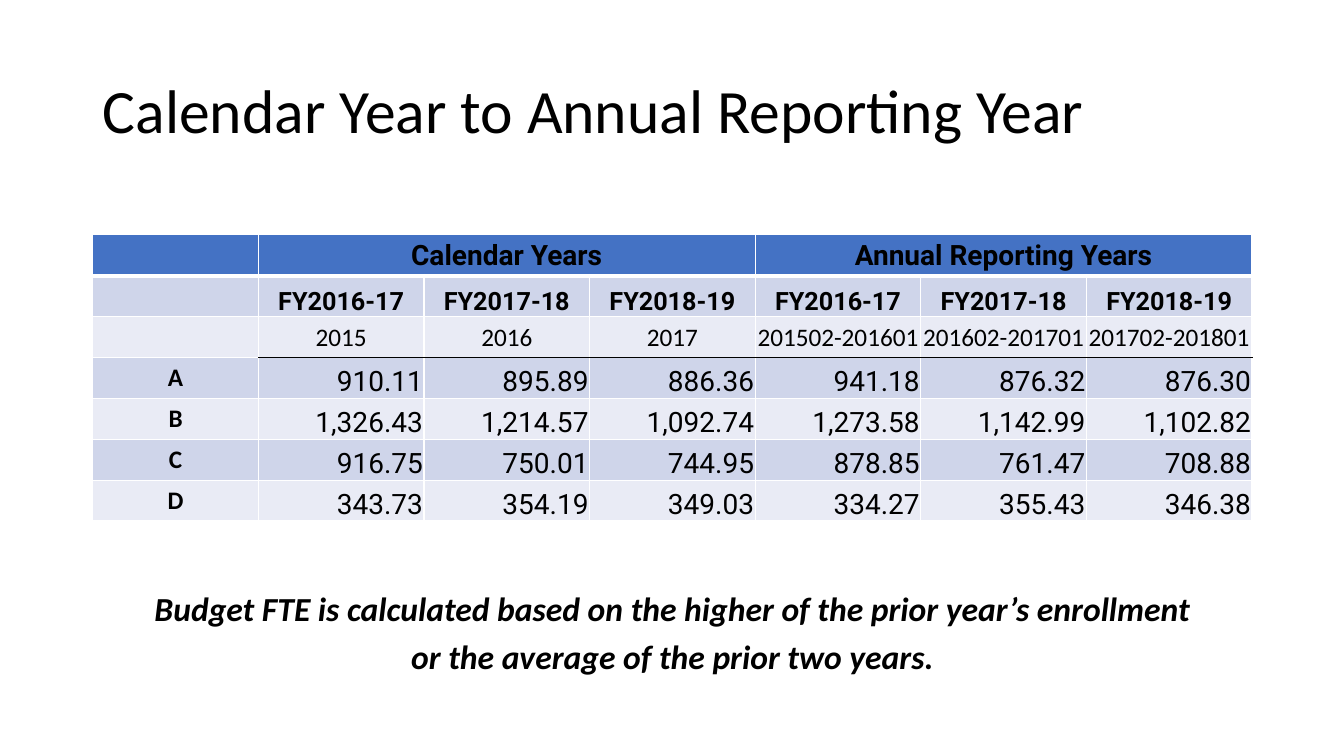
import pptx
import pptx.dml.color
import pptx.enum.text
import pptx.util
from lxml import etree
from pptx.oxml.ns import qn

TITLE = "Calendar Year to Annual Reporting Year"
YEARS = ["FY2016-17", "FY2017-18", "FY2018-19"]
ROWS = [
    ["", "Calendar Years", "", "", "Annual Reporting Years", "", ""],
    ["", *YEARS, *YEARS],
    ["", "2015", "2016", "2017", "201502-201601", "201602-201701", "201702-201801"],
    ["A", "910.11", "895.89", "886.36", "941.18", "876.32", "876.30"],
    ["B", "1,326.43", "1,214.57", "1,092.74", "1,273.58", "1,142.99", "1,102.82"],
    ["C", "916.75", "750.01", "744.95", "878.85", "761.47", "708.88"],
    ["D", "343.73", "354.19", "349.03", "334.27", "355.43", "346.38"],
]
BUDGET_RULE = [
    "Budget FTE is calculated based on the higher of the prior year’s enrollment",
    "or the average of the prior two years.",
]
COLORS = {"text": "000000", "grid": "FFFFFF", "rule": "000000",
          "header": "4472C4", "odd": "CFD5EA", "even": "E9EBF5"}

ALIGN = pptx.enum.text.PP_ALIGN
ANCHOR = pptx.enum.text.MSO_ANCHOR
# Row styles: font, size, bold, alignment, anchor
GROUP = ("Roboto", 20, True, ALIGN.CENTER, ANCHOR.MIDDLE)
FISCAL = ("Roboto", 18, True, ALIGN.CENTER, ANCHOR.BOTTOM)
PERIOD = ("Calibri", 18, False, ALIGN.CENTER, ANCHOR.MIDDLE)
VALUE = ("Roboto", 20, False, ALIGN.RIGHT, ANCHOR.BOTTOM)
LABEL = ("Calibri", 18, True, ALIGN.CENTER, ANCHOR.TOP)
ROW_STYLES = [GROUP, FISCAL, PERIOD] + [VALUE] * 4

inch = pptx.util.Inches
LEFT, WIDTH = inch(0.92), inch(11.5)
ROW_HEIGHT = inch(2.84 / len(ROWS))
PERIOD_ROW = 2


def style_paragraph(paragraph, font, size, bold, align, italic=False):
    paragraph.alignment = align
    for run in paragraph.runs:
        run.font.name = font
        run.font.size = pptx.util.Pt(size)
        run.font.bold = bold
        run.font.italic = italic
        run.font.color.rgb = pptx.dml.color.RGBColor.from_string(COLORS["text"])


def set_borders(cell, edges):
    """Draw the edges, given as (side, colour, points) in the order L, R, T, B."""
    properties = cell._tc.get_or_add_tcPr()
    for position, (side, color, points) in enumerate(edges):
        line = etree.Element(qn(f"a:ln{side}"), w=str(pptx.util.Pt(points)))
        fill = etree.SubElement(line, qn("a:solidFill"))
        etree.SubElement(fill, qn("a:srgbClr"), val=color)
        properties.insert(position, line)


def edge_above(row, column):
    """Colour and width of the line above a row, shared with the row before."""
    if row == 1:
        return COLORS["grid"], 3
    if row == PERIOD_ROW + 1 and column > 0:
        return COLORS["rule"], 1
    return COLORS["grid"], 1


def fill_cell(cell, row, column):
    band = "header" if row == 0 else "odd" if row % 2 else "even"
    cell.fill.solid()
    cell.fill.fore_color.rgb = pptx.dml.color.RGBColor.from_string(COLORS[band])
    set_borders(cell, [("L", COLORS["grid"], 1), ("R", COLORS["grid"], 1),
                       ("T", *edge_above(row, column)),
                       ("B", *edge_above(row + 1, column))])
    if not ROWS[row][column]:
        return
    font, size, bold, align, anchor = ROW_STYLES[row] if column else LABEL
    cell.text_frame.text = ROWS[row][column]
    style_paragraph(cell.text_frame.paragraphs[0], font, size, bold, align)
    cell.vertical_anchor = anchor
    if column:
        cell.margin_left = cell.margin_right = cell.margin_top = inch(0.01)
        cell.margin_bottom = 0


def add_title(slide):
    title = slide.shapes.title
    title.left, title.top, title.width, title.height = LEFT, inch(0.4), WIDTH, inch(1.45)
    title.text_frame.text = TITLE
    title.text_frame.auto_size = pptx.enum.text.MSO_AUTO_SIZE.NONE
    title.text_frame.vertical_anchor = ANCHOR.MIDDLE
    heading = title.text_frame.paragraphs[0]
    heading.line_spacing = 0.9
    style_paragraph(heading, "Calibri", 44, False, ALIGN.LEFT)


def add_enrollment_table(slide):
    columns = len(ROWS[0])
    table = slide.shapes.add_table(len(ROWS), columns, LEFT, inch(2.33),
                                   WIDTH, ROW_HEIGHT * len(ROWS)).table
    for row in range(len(ROWS)):
        for column in range(columns):
            fill_cell(table.cell(row, column), row, column)
    for first in (1, 1 + len(YEARS)):
        table.cell(0, first).merge(table.cell(0, first + len(YEARS) - 1))


def add_budget_rule(slide):
    note = slide.shapes.add_textbox(LEFT, inch(5.78), WIDTH, inch(0.99)).text_frame
    note.word_wrap = True
    note.auto_size = pptx.enum.text.MSO_AUTO_SIZE.SHAPE_TO_FIT_TEXT
    note.text = "\n".join(BUDGET_RULE)
    for paragraph in note.paragraphs:
        paragraph.space_after = pptx.util.Pt(6)
        style_paragraph(paragraph, "Calibri", 24, True, ALIGN.CENTER, italic=True)


def main():
    deck = pptx.Presentation()
    deck.slide_width, deck.slide_height = inch(13.33), inch(7.5)
    slide = deck.slides.add_slide(deck.slide_layouts.get_by_name("Title Only"))
    add_title(slide)
    add_enrollment_table(slide)
    add_budget_rule(slide)
    deck.save("out.pptx")


if __name__ == "__main__":
    main()
